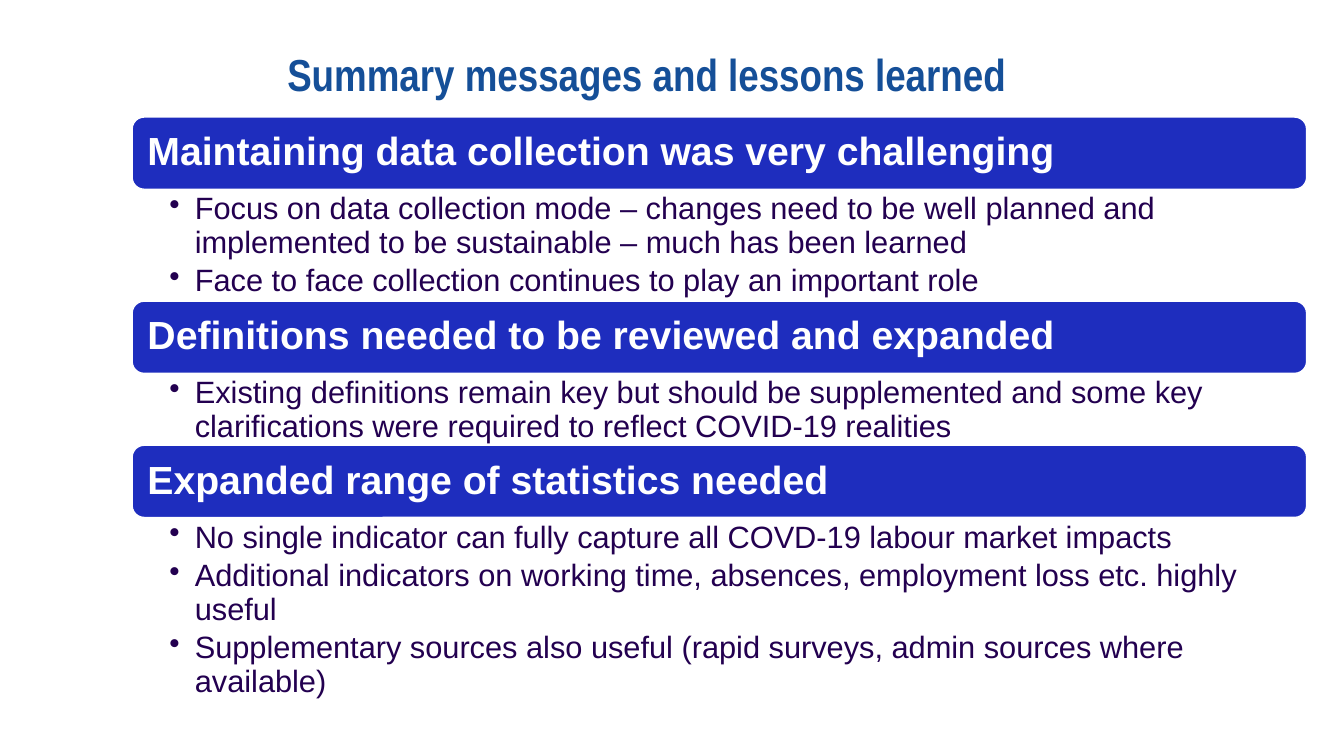
import dataclasses

import lxml.etree
import pptx
import pptx.dml.color
import pptx.enum.shapes
import pptx.enum.text
import pptx.oxml.ns
import pptx.util

Cm = pptx.util.Cm
Pt = pptx.util.Pt


@dataclasses.dataclass(frozen=True)
class Style:
    size: int
    face: str
    color: str
    bold: bool = False


@dataclasses.dataclass(frozen=True)
class Theme:
    bar: str = "1E2DBE"
    edge: str = "FFFFFF"
    title: Style = Style(32, "Arial Narrow", "154F98", True)
    head: Style = Style(28, "Arial", "FFFFFF", True)
    point: Style = Style(22, "Arial", "230050")


@dataclasses.dataclass(frozen=True)
class Topic:
    head: str
    points: tuple[str, ...]
    depth: float


THEME = Theme()
LEFT, TOP, WIDTH, BAR = 3.33, 2.95, 29.6, 1.82
TOPICS = (
    Topic(
        "Maintaining data collection was very challenging",
        (
            "Focus on data collection mode – changes need to be well planned and "
            "implemented to be sustainable – much has been learned",
            "Face to face collection continues to play an important role",
        ),
        2.82,
    ),
    Topic(
        "Definitions needed to be reviewed and expanded",
        (
            "Existing definitions remain key but should be supplemented and some key "
            "clarifications were required to reflect COVID-19 realities",
        ),
        1.81,
    ),
    Topic(
        "Expanded range of statistics needed",
        (
            "No single indicator can fully capture all COVD-19 labour market impacts",
            "Additional indicators on working time, absences, employment loss etc. "
            "highly useful",
            "Supplementary sources also useful (rapid surveys, admin sources where "
            "available)",
        ),
        4.6,
    ),
)


def paint(color: str) -> pptx.dml.color.RGBColor:
    return pptx.dml.color.RGBColor.from_string(color)


def set_frame(frame, sides: tuple[float, float, float, float]) -> None:
    frame.word_wrap = True
    frame.margin_left, frame.margin_top, frame.margin_right, frame.margin_bottom = map(
        Cm, sides
    )


def write(line, text: str, style: Style) -> None:
    line.text = text
    line.alignment = pptx.enum.text.PP_ALIGN.LEFT
    line.line_spacing = 0.9
    font = line.font
    font.size = Pt(style.size)
    font.name = style.face
    font.bold = style.bold
    font.color.rgb = paint(style.color)


def add_mark(line) -> None:
    props = line._p.get_or_add_pPr()
    props.set("marL", str(Cm(0.64)))
    props.set("indent", str(Cm(-0.64)))
    mark = lxml.etree.SubElement(props, pptx.oxml.ns.qn("a:buChar"))
    mark.set("char", "•")


def add_title(slide, text: str) -> None:
    box = slide.shapes.add_textbox(Cm(7.24), Cm(1.32), Cm(25.76), Cm(2))
    set_frame(box.text_frame, (0, 0, 0, 0))
    write(box.text_frame.paragraphs[0], text, THEME.title)


def add_head(slide, text: str, top: float) -> None:
    bar = slide.shapes.add_shape(
        pptx.enum.shapes.MSO_SHAPE.ROUNDED_RECTANGLE,
        Cm(LEFT), Cm(top), Cm(WIDTH), Cm(BAR),
    )
    bar.shadow.inherit = False
    bar.fill.solid()
    bar.fill.fore_color.rgb = paint(THEME.bar)
    bar.line.color.rgb = paint(THEME.edge)
    bar.line.width = Pt(1)
    set_frame(bar.text_frame, (0.3, 0.3, 0.3, 0.3))
    bar.text_frame.vertical_anchor = pptx.enum.text.MSO_ANCHOR.MIDDLE
    write(bar.text_frame.paragraphs[0], text, THEME.head)


def add_points(slide, topic: Topic, top: float) -> None:
    box = slide.shapes.add_textbox(Cm(LEFT), Cm(top), Cm(WIDTH), Cm(topic.depth))
    frame = box.text_frame
    set_frame(frame, (0.94, 0.1, 0.56, 0.1))
    for spot, text in enumerate(topic.points):
        line = frame.add_paragraph() if spot else frame.paragraphs[0]
        line.level = 1
        add_mark(line)
        line.space_after = Pt(4)
        write(line, text, THEME.point)


def main() -> None:
    deck = pptx.Presentation()
    deck.slide_width, deck.slide_height = Cm(33.87), Cm(19.05)
    slide = deck.slides.add_slide(deck.slide_layouts[6])
    add_title(slide, "Summary messages and lessons learned")
    top = TOP
    for topic in TOPICS:
        add_head(slide, topic.head, top)
        add_points(slide, topic, top + BAR)
        top += BAR + topic.depth
    deck.save("out.pptx")


if __name__ == "__main__":
    main()
